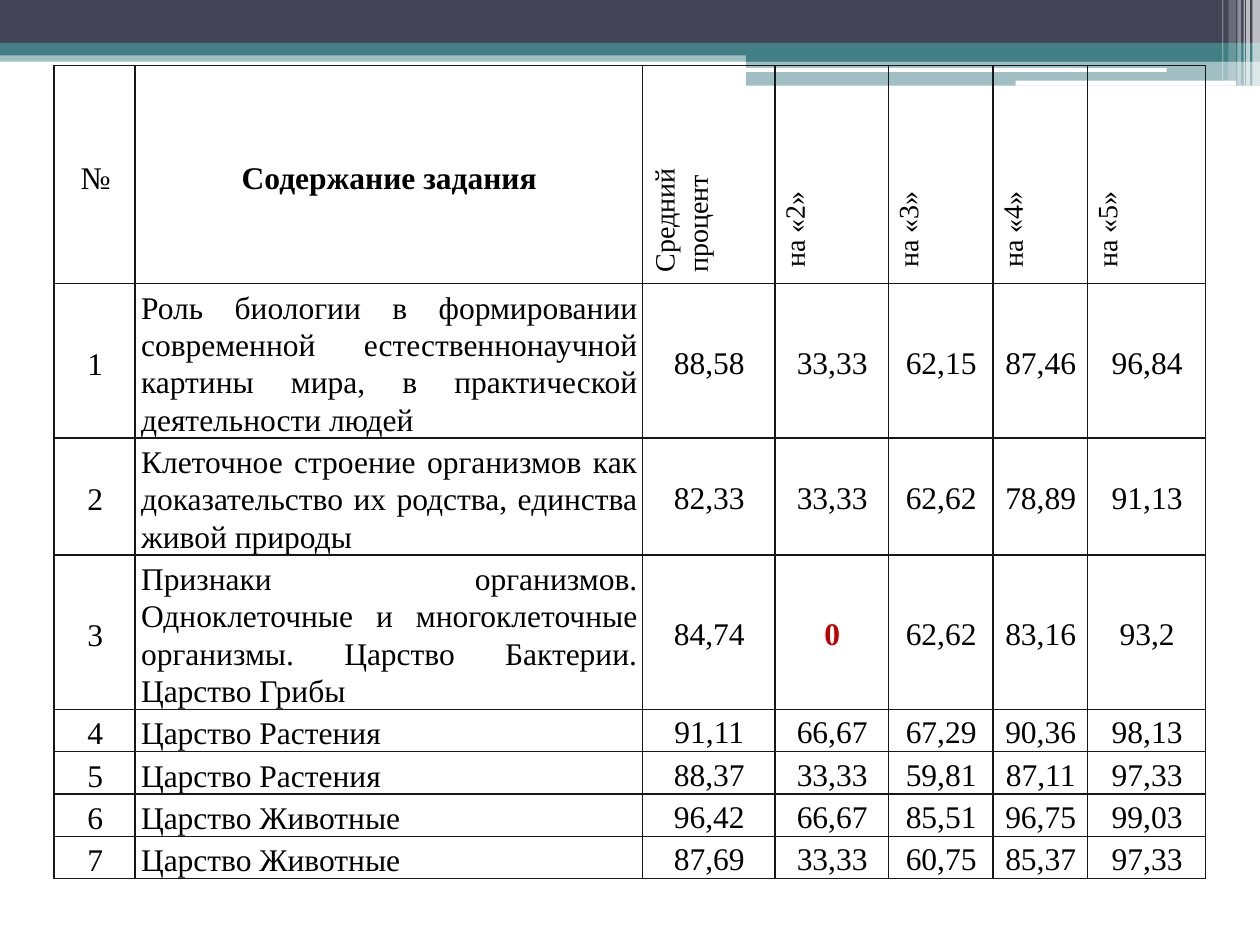
from lxml import etree
from pptx import Presentation
from pptx.dml import color
from pptx.enum import shapes, text
from pptx.oxml import ns
from pptx.util import Inches, Pt

FONT = "Times New Roman"
INK, RED, BORDER = "000000", "C00000", "181717"
NAVY, TEAL, WHITE = "424456", "438086", "FFFFFF"
CENTER, JUSTIFY, LEFT = text.PP_ALIGN.CENTER, text.PP_ALIGN.JUSTIFY, text.PP_ALIGN.LEFT

BANDS = [
    (0, 0.4, 10, 0.09, TEAL, 50),
    (0, 0, 10, 0.34, NAVY, 100),
    (0, 0.34, 10, 0.1, TEAL, 100),
    (5.92, 0.39, 4.08, 0.1, TEAL, 100),
    (5.92, 0.48, 4.08, 0.2, TEAL, 50),
]
ROUNDED_BARS = [(5.91, 0.54, 3.35, 0.03), (8.06, 0.64, 1.75, 0.04)]
STRIPES = [
    (9.94, 0.06, 0.68, 65),
    (9.89, 0.03, 0.68, 65),
    (9.87, 0.01, 0.68, 60),
    (9.82, 0.03, 0.68, 40),
    (9.75, 0.06, 0.64, 20),
    (9.7, 0.01, 0.64, 30),
]
COLUMN_WIDTHS = [0.64, 4.03, 1.05, 0.9, 0.83, 0.75, 0.94]
ROW_HEIGHTS = [0.94, 0.6, 0.41, 0.6] + [0.22] * 4
HEADINGS = ["№", "Содержание задания", "Средний процент", "на «2»", "на «3»", "на «4»", "на «5»"]
TASKS = [
    ("Роль биологии в формировании современной естественнонаучной картины мира, "
     "в практической деятельности людей", "88,58 33,33 62,15 87,46 96,84"),
    ("Клеточное строение организмов как доказательство их родства, единства живой природы",
     "82,33 33,33 62,62 78,89 91,13"),
    ("Признаки организмов. Одноклеточные и многоклеточные организмы. "
     "Царство Бактерии. Царство Грибы", "84,74 0 62,62 83,16 93,2"),
    ("Царство Растения", "91,11 66,67 67,29 90,36 98,13"),
    ("Царство Растения", "88,37 33,33 59,81 87,11 97,33"),
    ("Царство Животные", "96,42 66,67 85,51 96,75 99,03"),
    ("Царство Животные", "87,69 33,33 60,75 85,37 97,33"),
]


def rgb(value):
    return color.RGBColor.from_string(value)


def add_bar(page, left, top, width, height, fill, opacity=100, rounded=False):
    kind = shapes.MSO_SHAPE.ROUNDED_RECTANGLE if rounded else shapes.MSO_SHAPE.RECTANGLE
    bar = page.shapes.add_shape(kind, Inches(left), Inches(top), Inches(width), Inches(height))
    bar.shadow.inherit = False
    bar.line.fill.background()
    bar.fill.solid()
    bar.fill.fore_color.rgb = rgb(fill)
    if opacity < 100:
        tint = bar.fill._xPr.find(".//" + ns.qn("a:srgbClr"))
        etree.SubElement(tint, ns.qn("a:alpha"), val=str(opacity * 1000))


def add_borders(cell):
    properties = cell._tc.get_or_add_tcPr()
    for position, side in enumerate(("lnL", "lnR", "lnT", "lnB")):
        line = etree.Element(ns.qn(f"a:{side}"), w=str(Pt(1)))
        fill = etree.SubElement(line, ns.qn("a:solidFill"))
        etree.SubElement(fill, ns.qn("a:srgbClr"), val=BORDER)
        properties.insert(position, line)


def fill_cell(cell, words, align=CENTER, size=18, bold=False, ink=INK,
              middle=True, spacing=None, indent=0, upright=False):
    cell.fill.background()
    add_borders(cell)
    cell.margin_left, cell.margin_right = Inches(0.05), Inches(0.04)
    cell.margin_top, cell.margin_bottom = Inches(0.04), 0
    cell.vertical_anchor = text.MSO_ANCHOR.MIDDLE if middle else text.MSO_ANCHOR.TOP
    if upright:
        cell._tc.get_or_add_tcPr().set("vert", "vert270")
    para = cell.text_frame.paragraphs[0]
    para.alignment = align
    if spacing:
        para.line_spacing = spacing
    if indent:
        para._p.get_or_add_pPr().set("marL", str(Inches(indent)))
    span = para.add_run()
    span.text = words
    span.font.name, span.font.size, span.font.bold = FONT, Pt(size), bold
    span.font.color.rgb = rgb(ink)


def fill_headings(table):
    for column, words in enumerate(HEADINGS):
        cell = table.cell(0, column)
        if column < 2:
            fill_cell(cell, words, bold=column == 1, spacing=1.07, indent=0 if column else 0.01)
        else:
            fill_cell(cell, words, LEFT, 16, middle=False, upright=True,
                      spacing=1.07 if column == 2 else None,
                      indent=0.04 if column == 2 else 0.08)


def fill_tasks(table):
    for number, (content, scores) in enumerate(TASKS, 1):
        fill_cell(table.cell(number, 0), str(number), middle=number < 4, spacing=1.07)
        fill_cell(table.cell(number, 1), content, JUSTIFY, middle=False, spacing=1.07)
        for column, score in enumerate(scores.split(), 2):
            zero = score == "0"
            fill_cell(table.cell(number, column), score, bold=zero, ink=RED if zero else INK)


def add_results(page):
    frame = page.shapes.add_table(len(ROW_HEIGHTS), len(COLUMN_WIDTHS),
                                  Inches(0.43), Inches(0.52), Inches(9.13), Inches(6.02))
    table = frame.table
    table.first_row = table.horz_banding = False
    for column, width in zip(table.columns, COLUMN_WIDTHS):
        column.width = Inches(width)
    for row, height in zip(table.rows, ROW_HEIGHTS):
        row.height = Inches(height)
    frame.height = Inches(6.02)
    fill_headings(table)
    fill_tasks(table)


def main():
    deck = Presentation()
    deck.slide_width, deck.slide_height = Inches(10), Inches(7.5)
    page = deck.slides.add_slide(deck.slide_layouts[6])
    for band in BANDS:
        add_bar(page, *band)
    for bar in ROUNDED_BARS:
        add_bar(page, *bar, WHITE, rounded=True)
    for left, width, height, opacity in STRIPES:
        add_bar(page, left, 0, width, height, WHITE, opacity)
    add_results(page)
    deck.save("out.pptx")


if __name__ == "__main__":
    main()
